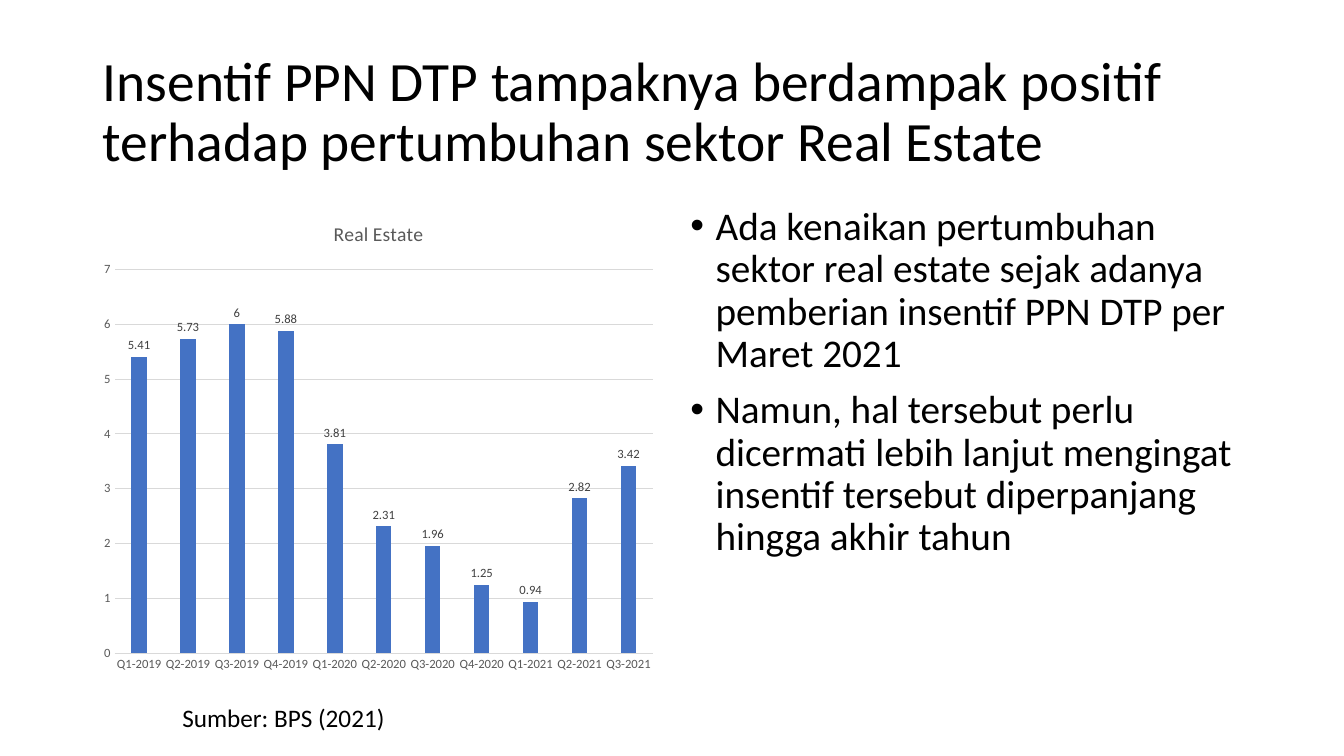
from lxml import etree
from pptx import Presentation
from pptx.chart.data import CategoryChartData
from pptx.dml.color import RGBColor
from pptx.enum.chart import XL_CHART_TYPE as ChartType, XL_LABEL_POSITION as LabelPosition, XL_TICK_MARK as TickMark
from pptx.enum.text import MSO_ANCHOR as Anchor, MSO_AUTO_SIZE as AutoSize, PP_ALIGN as Align
from pptx.oxml.ns import qn
from pptx.util import Inches, Pt

COLORS = {"text": "000000", "bar": "4472C4", "axis": "595959", "label": "404040", "grid": "D9D9D9"}
LEFT, TOP = 0.92, 2
COLUMN_WIDTH, COLUMN_HEIGHT, GUTTER = 5.67, 4.76, 0.16


def set_font(font, size, color):
    font.name = "Calibri"
    font.size = Pt(size)
    font.bold = False
    font.color.rgb = RGBColor.from_string(COLORS[color])


def inches(*lengths):
    return [Inches(length) for length in lengths]


presentation = Presentation()
presentation.slide_width, presentation.slide_height = inches(13.33, 7.5)
slide = presentation.slides.add_slide(presentation.slide_layouts[5])

# Title
title = slide.shapes.title
title.left, title.top, title.width, title.height = inches(LEFT, 0.4, 2 * COLUMN_WIDTH + GUTTER, 1.45)
title.text_frame.text = "Insentif PPN DTP tampaknya berdampak positif terhadap pertumbuhan sektor Real Estate"
title.text_frame.vertical_anchor = Anchor.MIDDLE
title.text_frame.auto_size = AutoSize.NONE
paragraph = title.text_frame.paragraphs[0]
paragraph.alignment = Align.LEFT
paragraph.line_spacing = 0.9
set_font(paragraph.font, 39.6, "text")

# Growth chart
growth = {
    "Q1-2019": 5.41, "Q2-2019": 5.73, "Q3-2019": 6, "Q4-2019": 5.88,
    "Q1-2020": 3.81, "Q2-2020": 2.31, "Q3-2020": 1.96, "Q4-2020": 1.25,
    "Q1-2021": 0.94, "Q2-2021": 2.82, "Q3-2021": 3.42,
}
chart_data = CategoryChartData()
chart_data.categories = list(growth)
chart_data.add_series("Real Estate", list(growth.values()))
chart = slide.shapes.add_chart(
    ChartType.COLUMN_CLUSTERED, *inches(LEFT, TOP, COLUMN_WIDTH, COLUMN_HEIGHT), chart_data
).chart
set_font(chart.font, 10, "text")
chart.has_legend = False
chart.has_title = True
chart.chart_title.text_frame.text = "Real Estate"
chart.chart_title.include_in_layout = False
set_font(chart.chart_title.text_frame.paragraphs[0].font, 14, "axis")

for axis in (chart.category_axis, chart.value_axis):
    axis.major_tick_mark = axis.minor_tick_mark = TickMark.NONE
    set_font(axis.tick_labels.font, 9, "axis")
chart.value_axis.minimum_scale = 0
chart.value_axis.maximum_scale = 7
chart.value_axis.major_unit = 1
chart.value_axis.format.line.fill.background()
for line in (chart.category_axis.format.line, chart.value_axis.major_gridlines.format.line):
    line.color.rgb = RGBColor.from_string(COLORS["grid"])
    line.width = Pt(0.75)

plot = chart.plots[0]
plot.gap_width = 219
plot.overlap = -27
plot.vary_by_categories = False
bars = plot.series[0]
bars.format.fill.solid()
bars.format.fill.fore_color.rgb = RGBColor.from_string(COLORS["bar"])
bars.data_labels.show_value = True
bars.data_labels.position = LabelPosition.OUTSIDE_END
set_font(bars.data_labels.font, 9, "label")

# Findings
findings = [
    "Ada kenaikan pertumbuhan sektor real estate sejak adanya pemberian insentif PPN DTP per Maret 2021",
    "Namun, hal tersebut perlu dicermati lebih lanjut mengingat insentif tersebut diperpanjang hingga akhir tahun",
]
findings_box = slide.shapes.add_textbox(*inches(LEFT + COLUMN_WIDTH + GUTTER, TOP, COLUMN_WIDTH, COLUMN_HEIGHT))
findings_frame = findings_box.text_frame
findings_frame.word_wrap = True
findings_frame.text = "\n".join(findings)
for paragraph in findings_frame.paragraphs:
    paragraph.line_spacing = 0.9
    paragraph.space_before = Pt(10)
    set_font(paragraph.font, 28, "text")
    properties = paragraph._p.get_or_add_pPr()
    properties.set("marL", str(Inches(0.25)))
    properties.set("indent", str(-Inches(0.25)))
    bullet_font = etree.Element(qn("a:buFont"), typeface="Arial")
    bullet = etree.Element(qn("a:buChar"), char="•")
    properties.find(qn("a:defRPr")).addprevious(bullet_font)
    bullet_font.addnext(bullet)

# Data source
source_box = slide.shapes.add_textbox(*inches(1.71, 6.92, 2.71, 0.4))
source_box.text_frame.word_wrap = True
source_box.text_frame.auto_size = AutoSize.SHAPE_TO_FIT_TEXT
source_box.text_frame.text = "Sumber: BPS (2021)"
set_font(source_box.text_frame.paragraphs[0].font, 18, "text")

presentation.save("out.pptx")
